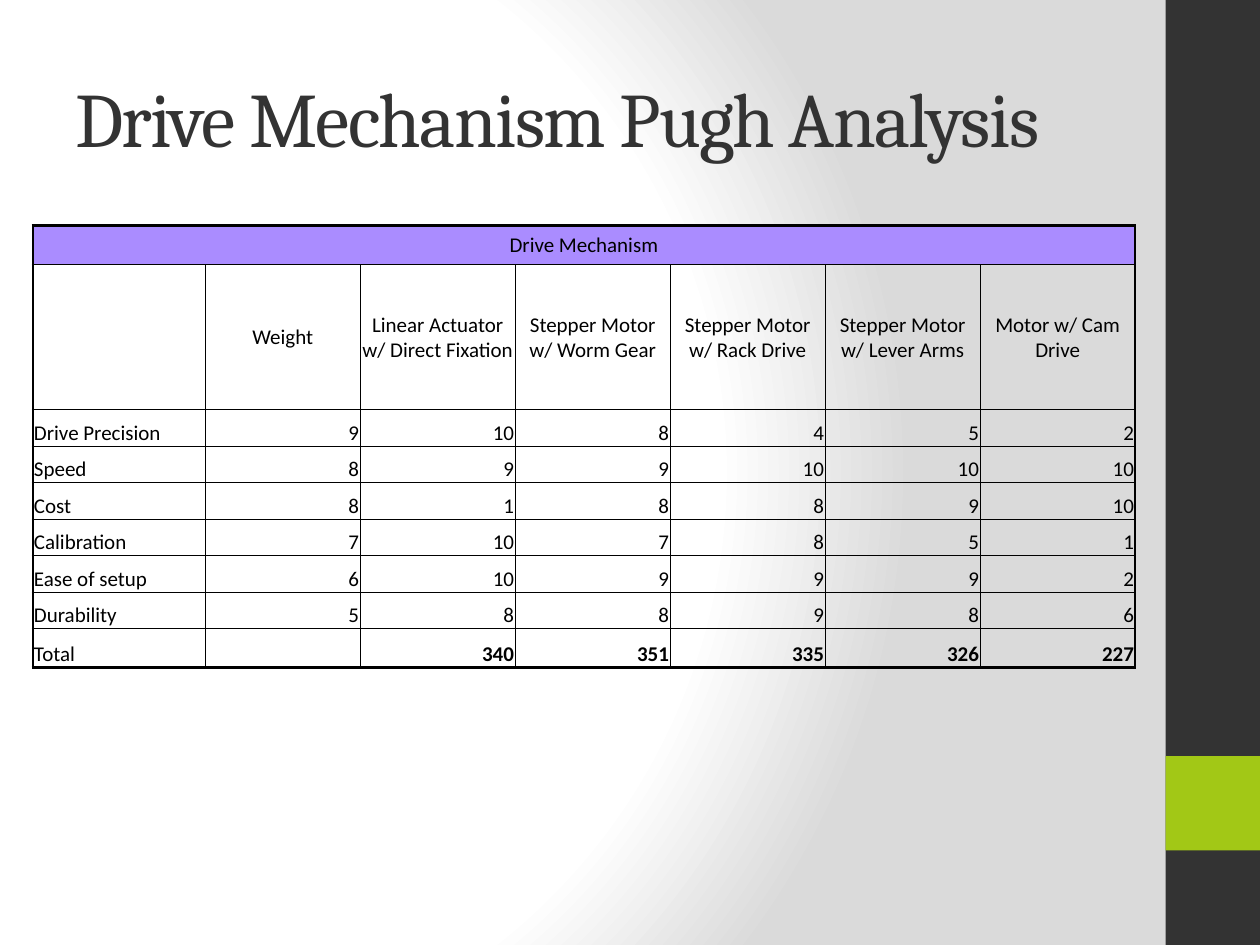
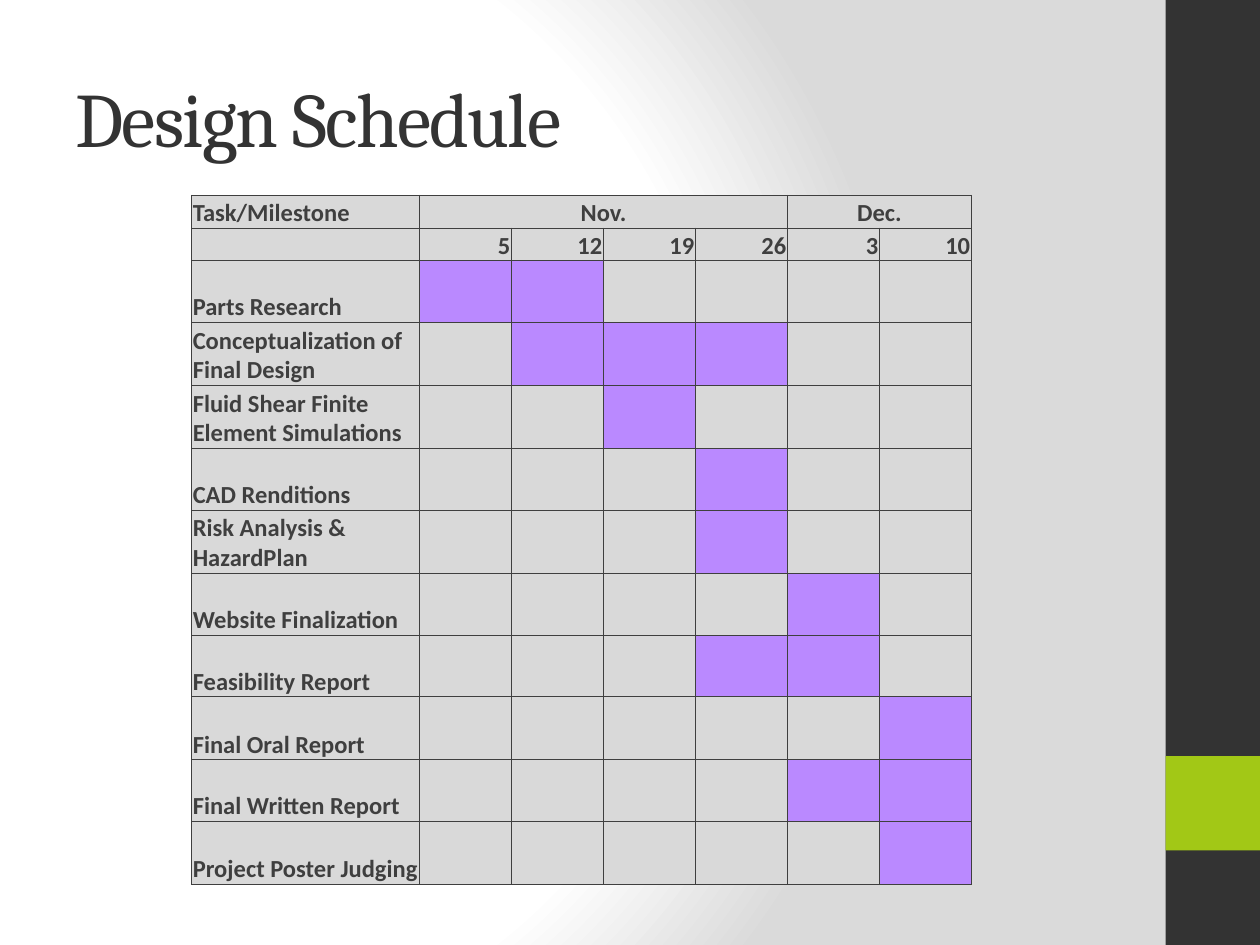
from lxml.etree import SubElement
from pptx import Presentation
from pptx.dml.color import RGBColor
from pptx.enum.shapes import MSO_SHAPE
from pptx.enum.text import MSO_ANCHOR, PP_ALIGN
from pptx.oxml import parse_xml
from pptx.oxml.ns import qn
from pptx.util import Inches, Pt

DARK = "333333"
GREEN = "A2C816"
BLACK = "000000"
GREY = "3F3F3F"
PALE = "D9D9D9"
LILAC = "AA8CFF"
VIOLET = "BA89FF"
HEAD = "Cambria"
BODY = "Calibri"
STOPS = [(0, "FFFFFF"), (75, "FFFFFF"), (100, "DADADA")]

DRIVES = [
    "Linear Actuator w/ Direct Fixation",
    "Stepper Motor w/ Worm Gear",
    "Stepper Motor w/ Rack Drive",
    "Stepper Motor w/ Lever Arms",
    "Motor w/ Cam Drive",
]
SCORES = [
    ("Drive Precision", 9, [10, 8, 4, 5, 2]),
    ("Speed", 8, [9, 9, 10, 10, 10]),
    ("Cost", 8, [1, 8, 8, 9, 10]),
    ("Calibration", 7, [10, 7, 8, 5, 1]),
    ("Ease of setup", 6, [10, 9, 9, 9, 2]),
    ("Durability", 5, [8, 8, 9, 8, 6]),
]
WEEKS = [5, 12, 19, 26, 3, 10]
TASKS = [
    ("Parts Research", 5, 12),
    ("Conceptualization of Final Design", 12, 26),
    ("Fluid Shear Finite Element Simulations", 19, 19),
    ("CAD Renditions", 26, 26),
    ("Risk Analysis & HazardPlan", 26, 26),
    ("Website Finalization", 3, 3),
    ("Feasibility Report", 26, 3),
    ("Final Oral Report", 10, 10),
    ("Final Written Report", 3, 10),
    ("Project Poster Judging", 10, 10),
]


def color(code):
    return RGBColor.from_string(code)


def paint(item, code):
    if code:
        item.fill.solid()
        item.fill.fore_color.rgb = color(code)
    else:
        item.fill.background()


def style(run, font, size, code, bold=False):
    run.font.name = font
    run.font.size = Pt(size)
    run.font.bold = bold
    run.font.color.rgb = color(code)


def backdrop(master):
    master.background.fill.solid()
    holder = master.element.find(".//" + qn("p:bgPr"))
    stops = "".join(
        f'<a:gs pos="{place * 1000}"><a:srgbClr val="{code}"/></a:gs>'
        for place, code in STOPS
    )
    blend = parse_xml(
        '<a:gradFill xmlns:a="http://schemas.openxmlformats.org/drawingml/2006/main"'
        f' rotWithShape="1"><a:gsLst>{stops}</a:gsLst><a:path path="circle">'
        '<a:fillToRect l="20000" t="50000" r="100000" b="50000"/></a:path></a:gradFill>'
    )
    holder.replace(holder[0], blend)


def band(slide, top, height, code):
    box = slide.shapes.add_shape(
        MSO_SHAPE.RECTANGLE, Inches(9.25), Inches(top), Inches(0.75), Inches(height)
    )
    box.shadow.inherit = False
    box.line.fill.background()
    paint(box, code)


def title(slide, text):
    box = slide.shapes.add_textbox(
        Inches(0.5), Inches(0.3), Inches(8.33), Inches(1.25)
    )
    frame = box.text_frame
    frame.word_wrap = True
    frame.vertical_anchor = MSO_ANCHOR.MIDDLE
    frame.text = text
    run = frame.paragraphs[0].runs[0]
    style(run, HEAD, 44, DARK)
    run.font._element.set("spc", "-100")


def new_slide(deck, text):
    slide = deck.slides.add_slide(deck.slide_layouts[6])
    band(slide, 0, 7.5, DARK)
    band(slide, 6, 0.75, GREEN)
    title(slide, text)
    return slide


def grid(slide, left, top, cols, rows):
    frame = slide.shapes.add_table(
        len(rows), len(cols), Inches(left), Inches(top),
        Inches(sum(cols)), Inches(sum(rows)),
    )
    table = frame.table
    table.first_row = False
    table.horz_banding = False
    for col, width in zip(table.columns, cols):
        col.width = Inches(width)
    for row, height in zip(table.rows, rows):
        row.height = Inches(height)
    return table


def span(table, row, first, last):
    table.cell(row, first).merge(table.cell(row, last))


def border(cell, code, widths):
    props = cell._tc.get_or_add_tcPr()
    for side, width in zip("LRTB", widths):
        line = SubElement(props, qn(f"a:ln{side}"), w=str(Pt(width)))
        fill = SubElement(line, qn("a:solidFill"))
        SubElement(fill, qn("a:srgbClr"), val=code)


def write(cell, text, size, code, bold, align):
    cell.margin_left = cell.margin_right = cell.margin_top = Inches(0.01)
    cell.margin_bottom = 0
    para = cell.text_frame.paragraphs[0]
    para.text = text
    para.alignment = align
    for run in para.runs:
        style(run, BODY, size, code, bold)
    if not text:
        SubElement(para._p, qn("a:endParaRPr"), sz=str(size * 100))


def fill_grid(table, data, size, code, edge, bold, shade, middle):
    high, wide = len(table.rows), len(table.columns)
    for r, line in enumerate(data):
        for c, value in enumerate(line):
            cell = table.cell(r, c)
            text = str(value)
            if text.isdigit():
                align = PP_ALIGN.RIGHT
            elif c or cell.span_width > 1:
                align = PP_ALIGN.CENTER
            else:
                align = PP_ALIGN.LEFT
            ends = [c == 0, c + cell.span_width == wide, r == 0, r == high - 1]
            border(cell, code, [edge if end else 0.5 for end in ends])
            write(cell, text, size, code, bold(r, c), align)
            cell.vertical_anchor = (
                MSO_ANCHOR.MIDDLE if r < middle else MSO_ANCHOR.BOTTOM
            )
            paint(cell, shade(r, c))


def pugh(deck):
    slide = new_slide(deck, "Drive Mechanism Pugh Analysis")
    table = grid(
        slide, 0.26, 1.79, [1.37] + [1.23] * 6, [0.31, 1.15] + [0.29] * 6 + [0.31]
    )
    span(table, 0, 0, 6)
    sums = [
        sum(weight * marks[i] for _, weight, marks in SCORES)
        for i in range(len(DRIVES))
    ]
    data = [["Drive Mechanism"] + [""] * 6, ["", "Weight"] + DRIVES]
    data += [[name, weight] + marks for name, weight, marks in SCORES]
    data.append(["Total", ""] + sums)
    last = len(data) - 1
    fill_grid(
        table, data, 12, BLACK, 1.5,
        bold=lambda r, c: r == last and c > 1,
        shade=lambda r, c: LILAC if r == 0 else None,
        middle=2,
    )


def schedule(deck):
    slide = new_slide(deck, "Design Schedule")
    table = grid(
        slide, 1.52, 1.55, [1.81] + [0.73] * 6,
        [0.26] * 2 + [0.49, 0.5, 0.5, 0.49, 0.5, 0.49, 0.49, 0.5, 0.49, 0.5],
    )
    span(table, 0, 1, 4)
    span(table, 0, 5, 6)
    data = [["Task/Milestone", "Nov.", "", "", "", "Dec.", ""], [""] + WEEKS]
    data += [[name] + [""] * 6 for name, _, _ in TASKS]

    def shade(r, c):
        if r < 2 or c == 0:
            return PALE
        _, start, end = TASKS[r - 2]
        busy = WEEKS.index(start) < c <= WEEKS.index(end) + 1
        return VIOLET if busy else PALE

    fill_grid(
        table, data, 14, GREY, 0.5,
        bold=lambda r, c: True, shade=shade, middle=0,
    )


def main():
    deck = Presentation()
    deck.slide_width = Inches(10)
    deck.slide_height = Inches(7.5)
    backdrop(deck.slide_master)
    pugh(deck)
    schedule(deck)
    deck.save("out.pptx")


if __name__ == "__main__":
    main()
